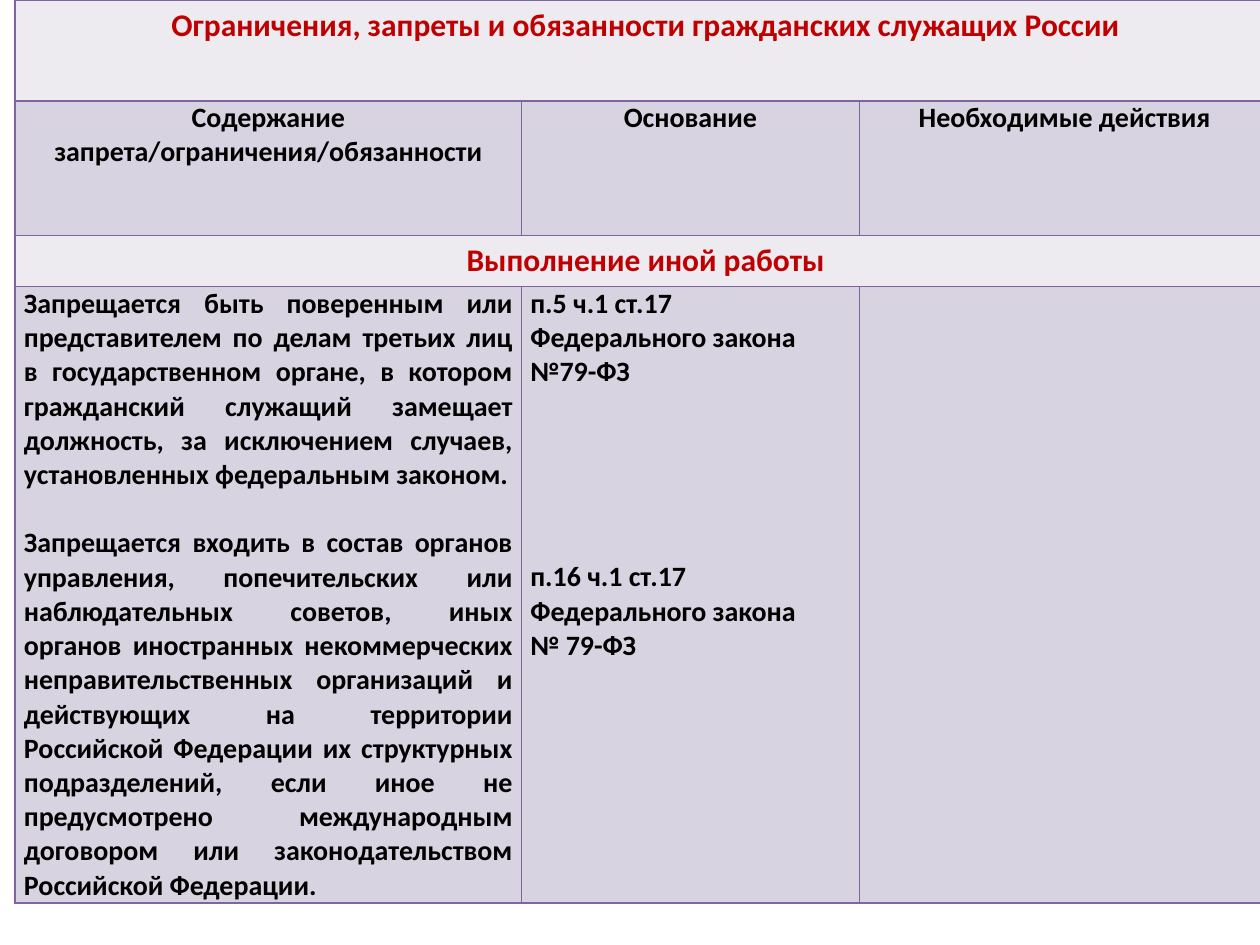
from lxml import etree
from pptx import Presentation
from pptx.dml.color import RGBColor
from pptx.enum.text import PP_ALIGN
from pptx.oxml.ns import qn
from pptx.util import Inches, Pt

LEFT, CENTER, JUSTIFY = PP_ALIGN.LEFT, PP_ALIGN.CENTER, PP_ALIGN.JUSTIFY
RED = RGBColor(0xC0, 0x00, 0x00)
BLACK = RGBColor(0x00, 0x00, 0x00)
PURPLE = RGBColor(0x80, 0x64, 0xA2)
PALE = RGBColor(0xED, 0xEA, 0xF0)
LILAC = RGBColor(0xD8, 0xD3, 0xE0)

LINE_HEIGHT = 19.54  # points, one line of 16 pt Calibri
COLUMN_WIDTHS = [4.02, 2.68, 3.31]
ROW_HEIGHTS = [0.8, 1.07, 0.39, 4.83]

TITLE = "Ограничения, запреты и обязанности гражданских служащих России"
HEADINGS = [
    "Содержание запрета/ограничения/обязанности",
    "Основание",
    "Необходимые действия ",
]
SECTION = "Выполнение иной работы"
# Each paragraph is its text and the number of lines left free above it.
PROHIBITIONS = [
    ("Запрещается быть поверенным или представителем по делам третьих лиц "
     "в государственном органе, в котором гражданский служащий замещает "
     "должность, за исключением случаев, установленных федеральным законом.", 0),
    ("Запрещается входить в состав органов управления, попечительских или "
     "наблюдательных советов, иных органов иностранных некоммерческих "
     "неправительственных организаций и действующих на территории Российской "
     "Федерации их структурных подразделений, если иное не предусмотрено "
     "международным договором или законодательством Российской Федерации.", 1),
]
GROUNDS = [
    ("п.5 ч.1 ст.17 Федерального закона №79-ФЗ", 0),
    ("п.16 ч.1 ст.17 Федерального закона", 5),
    ("№ 79-ФЗ", 0),
]


class SlideBuilder:
    banner_font = {"name": "Calibri", "size": Pt(18), "bold": True}
    body_font = {"name": "Calibri", "size": Pt(16), "bold": True}
    body_margins = {
        "margin_left": Inches(0.07), "margin_right": Inches(0.07),
        "margin_top": 0, "margin_bottom": 0,
    }

    def __init__(self, slide):
        self.slide = slide

    def add_table(self, left, top, widths, heights):
        frame = self.slide.shapes.add_table(
            len(heights), len(widths), Inches(left), Inches(top),
            Inches(sum(widths)), Inches(sum(heights)))
        table = frame.table
        for column, width in zip(table.columns, widths):
            column.width = Inches(width)
        for row, height in zip(table.rows, heights):
            row.height = Inches(height)
        for cell in table.iter_cells():
            self.add_borders(cell)
        return table

    def add_borders(self, cell):
        properties = cell._tc.get_or_add_tcPr()
        for side in ("a:lnL", "a:lnR", "a:lnT", "a:lnB"):
            line = etree.SubElement(properties, qn(side), w=str(Pt(1)))
            fill = etree.SubElement(line, qn("a:solidFill"))
            etree.SubElement(fill, qn("a:srgbClr"), val=str(PURPLE))

    def fill_cell(self, cell, color):
        cell.fill.solid()
        cell.fill.fore_color.rgb = color

    def add_text(self, cell, paragraphs, alignment, font, color):
        for index, (text, free_lines) in enumerate(paragraphs):
            frame = cell.text_frame
            paragraph = frame.add_paragraph() if index else frame.paragraphs[0]
            paragraph.alignment = alignment
            paragraph.space_before = Pt(free_lines * LINE_HEIGHT)
            run = paragraph.add_run()
            run.text = text
            for name, value in font.items():
                setattr(run.font, name, value)
            run.font.color.rgb = color

    def add_banner(self, table, row, text):
        """Put a heading across the full width of the table."""
        last = len(table.columns) - 1
        for column in range(last + 1):
            self.fill_cell(table.cell(row, column), PALE)
        cell = table.cell(row, 0)
        cell.merge(table.cell(row, last))
        self.add_text(cell, [(text, 0)], CENTER, self.banner_font, RED)

    def add_body_cell(self, cell, paragraphs, alignment):
        for name, value in self.body_margins.items():
            setattr(cell, name, value)
        self.fill_cell(cell, LILAC)
        self.add_text(cell, paragraphs, alignment, self.body_font, BLACK)


def main():
    presentation = Presentation()
    presentation.slide_width = Inches(10)
    presentation.slide_height = Inches(7.5)
    blank_layout = presentation.slide_layouts[6]
    builder = SlideBuilder(presentation.slides.add_slide(blank_layout))

    table = builder.add_table(0.12, 0, COLUMN_WIDTHS, ROW_HEIGHTS)
    builder.add_banner(table, 0, TITLE)
    for column, heading in enumerate(HEADINGS):
        builder.add_body_cell(table.cell(1, column), [(heading, 0)], CENTER)
    builder.add_banner(table, 2, SECTION)
    contents = [(PROHIBITIONS, JUSTIFY), (GROUNDS, LEFT), ([], LEFT)]
    for column, (paragraphs, alignment) in enumerate(contents):
        builder.add_body_cell(table.cell(3, column), paragraphs, alignment)

    presentation.save("out.pptx")


if __name__ == "__main__":
    main()
